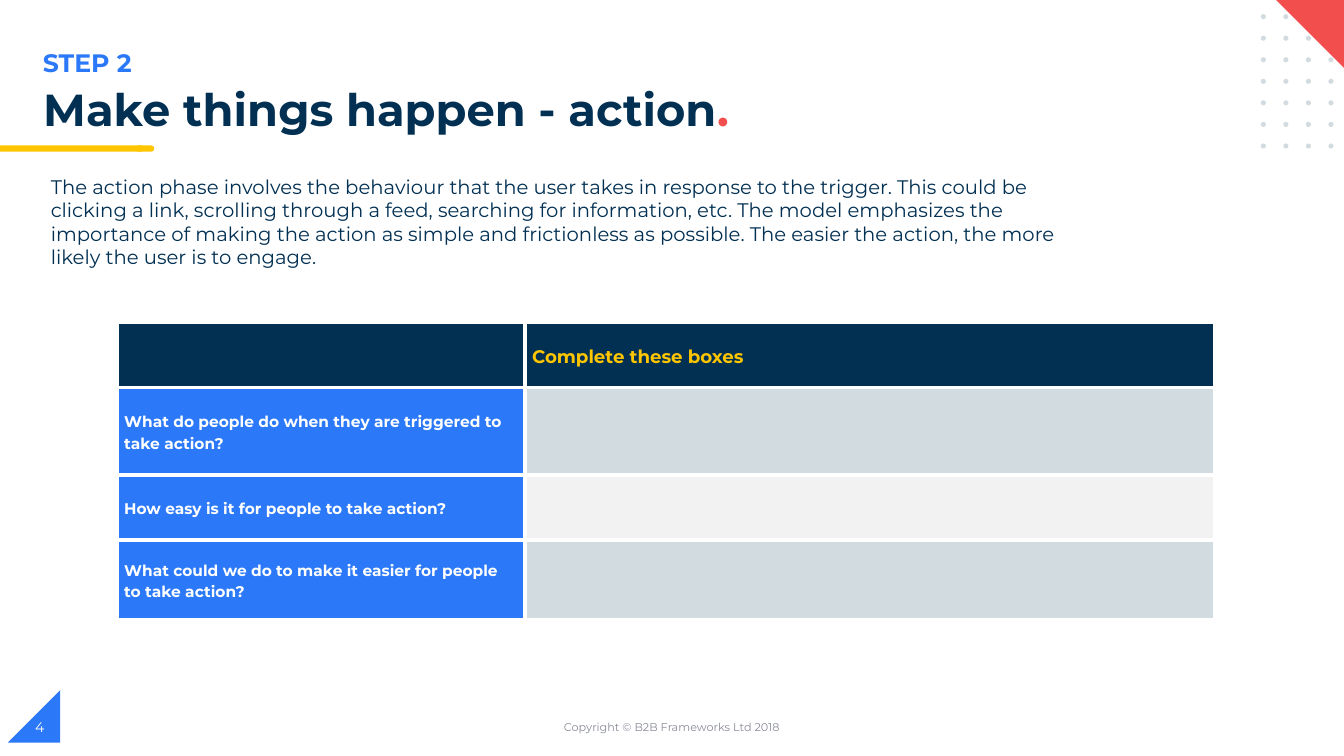
import dataclasses
import itertools

import lxml.etree
import pptx
import pptx.dml.color
import pptx.enum.shapes
import pptx.enum.text
import pptx.oxml.ns
import pptx.util

Pt = pptx.util.Pt
Shape = pptx.enum.shapes.MSO_SHAPE
Align = pptx.enum.text.PP_ALIGN
Anchor = pptx.enum.text.MSO_ANCHOR


@dataclasses.dataclass(frozen=True)
class Theme:
    font: str = "Montserrat"
    navy: str = "023053"
    blue: str = "2B79F8"
    red: str = "F24E4E"
    gold: str = "FFC600"
    mist: str = "D1DBE0"
    pale: str = "F2F2F2"
    grey: str = "888C97"
    white: str = "FFFFFF"
    title: float = 32
    step: float = 18
    body: float = 14
    head: float = 13
    cell: float = 11
    page: float = 10
    foot: float = 8


def rgb(code):
    return pptx.dml.color.RGBColor.from_string(code)


class Maker:
    def __init__(self, slide, theme):
        self.slide = slide
        self.theme = theme

    def style(self, run, size, color, bold=False):
        run.font.name = self.theme.font
        run.font.size = Pt(size)
        run.font.bold = bold
        run.font.color.rgb = rgb(color)

    def shape(self, kind, place, color):
        shape = self.slide.shapes.add_shape(kind, *map(Pt, place))
        shape.shadow.inherit = False
        shape.fill.solid()
        shape.fill.fore_color.rgb = rgb(color)
        shape.line.fill.background()
        return shape

    def text(self, words, place, size, color, bold=False,
             align=Align.LEFT, anchor=Anchor.TOP):
        frame = self.slide.shapes.add_textbox(*map(Pt, place)).text_frame
        frame.word_wrap = True
        frame.vertical_anchor = anchor
        frame.text = words
        line = frame.paragraphs[0]
        line.alignment = align
        self.style(line.runs[0], size, color, bold)
        return line

    def edge(self, cell, color, width):
        props = cell._tc.get_or_add_tcPr()
        for side in ("a:lnL", "a:lnR", "a:lnT", "a:lnB"):
            line = lxml.etree.SubElement(
                props, pptx.oxml.ns.qn(side), w=str(Pt(width)))
            fill = lxml.etree.SubElement(line, pptx.oxml.ns.qn("a:solidFill"))
            lxml.etree.SubElement(
                fill, pptx.oxml.ns.qn("a:srgbClr"), val=color)

    def cell(self, cell, words, size, color, fill):
        self.edge(cell, self.theme.white, 3)
        cell.fill.solid()
        cell.fill.fore_color.rgb = rgb(fill)
        cell.vertical_anchor = Anchor.MIDDLE
        cell.margin_left = cell.margin_right = Pt(5)
        cell.margin_top = cell.margin_bottom = Pt(0)
        if words:
            cell.text_frame.text = words
            line = cell.text_frame.paragraphs[0]
            line.line_spacing = 1.15
            self.style(line.runs[0], size, color, True)

    def table(self, left, top, widths, heights):
        table = self.slide.shapes.add_table(
            len(heights), len(widths), Pt(left), Pt(top),
            Pt(sum(widths)), Pt(sum(heights))).table
        table.first_row = table.horz_banding = False
        for col, width in zip(table.columns, widths):
            col.width = Pt(width)
        for row, height in zip(table.rows, heights):
            row.height = Pt(height)
        return table


def main():
    deck = pptx.Presentation()
    deck.slide_width, deck.slide_height = Pt(960), Pt(540)
    theme = Theme()
    make = Maker(deck.slides.add_slide(deck.slide_layouts[6]), theme)

    # Page corner
    corner = make.shape(Shape.RIGHT_TRIANGLE, (5.6, 493, 37.4, 37.4),
                        theme.blue)
    corner._element.spPr.get_or_add_xfrm().set("flipH", "1")

    # Gold bar with a round end
    make.shape(Shape.FLOWCHART_TERMINATOR, (96.5, 103.9, 13.7, 4.4),
               theme.gold)
    make.shape(Shape.RECTANGLE, (0, 103.9, 101.5, 4.4), theme.gold)

    # Dot grid and red corner
    for col, row in itertools.product(range(4), range(7)):
        make.shape(Shape.OVAL,
                   (900.6 + 16.1 * col, 10.1 + 15.4 * row, 3.6, 3.6),
                   theme.mist)
    flag = make.shape(Shape.RIGHT_TRIANGLE, (911, -0.6, 51.6, 51.6),
                      theme.red)
    flag.rotation = 180

    # Heading
    make.text("STEP 2", (23.6, 30.2, 482, 29), theme.step, theme.blue, True)
    title = make.text("Make things happen - action", (23.8, 59, 803, 40.5),
                      theme.title, theme.navy, True)
    title.line_spacing = 0.9
    stop = title.add_run()
    stop.text = "."
    make.style(stop, theme.title, theme.red, True)

    # Introduction
    make.text(
        "The action phase involves the behaviour that the user takes in "
        "response to the trigger. This could be clicking a link, scrolling "
        "through a feed, searching for information, etc. The model "
        "emphasizes the importance of making the action as simple and "
        "frictionless as possible. The easier the action, the more likely "
        "the user is to engage.",
        (29.2, 121.2, 754.6, 75), theme.body, theme.navy)

    # Question table
    table = make.table(83.7, 230.3, (291.4, 492.4), (46.6, 62.5, 46.6, 56.6))
    make.cell(table.cell(0, 0), "", theme.head, theme.gold, theme.navy)
    make.cell(table.cell(0, 1), "Complete these boxes", theme.head,
              theme.gold, theme.navy)
    asks = (
        ("What do people do when they are triggered to take action?",
         theme.mist),
        ("How easy is it for people to take action?", theme.pale),
        ("What could we do to make it easier for people to take action?",
         theme.mist),
    )
    for row, (ask, fill) in enumerate(asks, 1):
        make.cell(table.cell(row, 0), ask, theme.cell, theme.white,
                  theme.blue)
        make.cell(table.cell(row, 1), "", theme.cell, theme.navy, fill)

    # Footer
    make.text("Copyright © B2B Frameworks Ltd 2018", (318, 505.1, 324, 28.8),
              theme.foot, theme.grey, align=Align.CENTER,
              anchor=Anchor.MIDDLE)
    make.text("4", (18, 505.1, 216, 28.8), theme.page, theme.white,
              anchor=Anchor.MIDDLE)

    deck.save("out.pptx")


if __name__ == "__main__":
    main()
